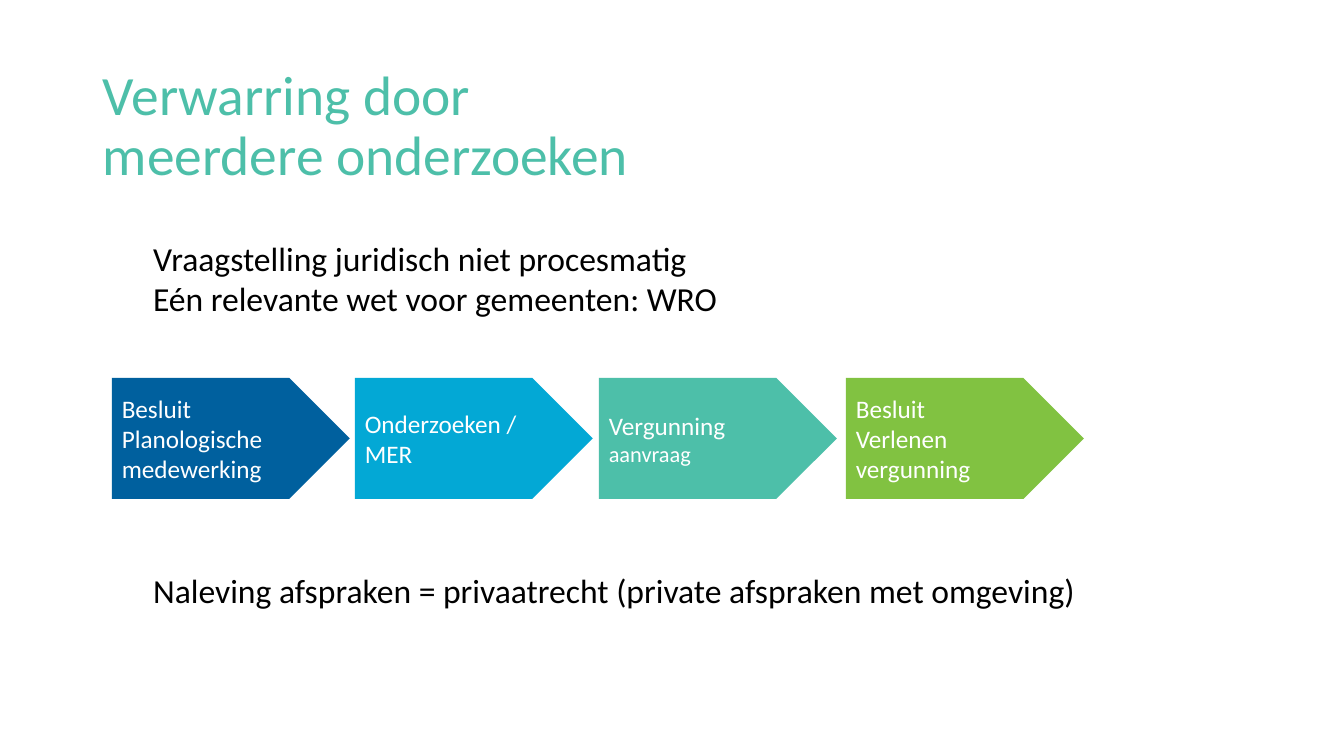
from dataclasses import dataclass

from pptx import Presentation
from pptx.dml.color import RGBColor
from pptx.enum.shapes import MSO_SHAPE as Shape
from pptx.enum.text import MSO_ANCHOR as Anchor, MSO_AUTO_SIZE as AutoSize, PP_ALIGN as Align
from pptx.util import Inches, Pt


@dataclass(frozen=True)
class Theme:
    font: str = "Calibri"
    title_size: float = 39.6
    body_size: float = 24
    step_size: float = 18
    small_size: float = 16
    black: str = "000000"
    white: str = "FFFFFF"
    navy: str = "00609E"
    blue: str = "03A8D5"
    teal: str = "4DBFA9"
    green: str = "81C241"


theme = Theme()


def write(frame, lines, color):
    """Fill a text frame with left-aligned (text, size) paragraphs."""
    for index, (text, size) in enumerate(lines):
        paragraph = frame.paragraphs[0] if index == 0 else frame.add_paragraph()
        paragraph.text = text
        paragraph.alignment = Align.LEFT
        paragraph.font.name = theme.font
        paragraph.font.size = Pt(size)
        paragraph.font.color.rgb = RGBColor.from_string(color)


presentation = Presentation()
presentation.slide_width, presentation.slide_height = Inches(13.33), Inches(7.5)
slide = presentation.slides.add_slide(presentation.slide_layouts[5])

# Title, raised above the middle of its box by a deep bottom margin
title = slide.shapes.title
title.left, title.top, title.width, title.height = map(Inches, (0.92, 0.84, 11.5, 1.45))
frame = title.text_frame
frame.word_wrap = True
frame.auto_size = AutoSize.NONE
frame.vertical_anchor = Anchor.MIDDLE
frame.margin_bottom = Inches(0.65)
write(frame, [("Verwarring door\vmeerdere onderzoeken", theme.title_size)], theme.teal)
frame.paragraphs[0].line_spacing = 0.9

# Process steps: left edge, fill, lines
step_top, step_width, step_height = 3.75, 2.36, 1.2
steps = [
    (1.11, theme.navy, [("Besluit", theme.step_size),
                        ("Planologische medewerking", theme.step_size)]),
    (3.52, theme.blue, [("Onderzoeken / MER", theme.step_size)]),
    (5.94, theme.teal, [("Vergunning", theme.step_size), ("aanvraag", theme.small_size)]),
    (8.39, theme.green, [("Besluit", theme.step_size),
                         ("Verlenen vergunning", theme.step_size)]),
]
for left, fill, lines in steps:
    step = slide.shapes.add_shape(
        Shape.PENTAGON, *map(Inches, (left, step_top, step_width, step_height)))
    step.shadow.inherit = False
    step.fill.solid()
    step.fill.fore_color.rgb = RGBColor.from_string(fill)
    step.line.fill.background()
    step.text_frame.word_wrap = True
    step.text_frame.vertical_anchor = Anchor.MIDDLE
    write(step.text_frame, lines, theme.white)

# Statements above and below the steps
statements = [
    (2.31, 5.93, 0.91, ["Vraagstelling juridisch niet procesmatig",
                        "Eén relevante wet voor gemeenten: WRO"]),
    (5.6, 9.43, 0.81, ["Naleving afspraken = privaatrecht (private afspraken met omgeving)"]),
]
for top, width, height, texts in statements:
    box = slide.shapes.add_textbox(*map(Inches, (1.42, top, width, height)))
    box.text_frame.word_wrap = False
    box.text_frame.auto_size = AutoSize.SHAPE_TO_FIT_TEXT
    write(box.text_frame, [(text, theme.body_size) for text in texts], theme.black)

presentation.save("out.pptx")
